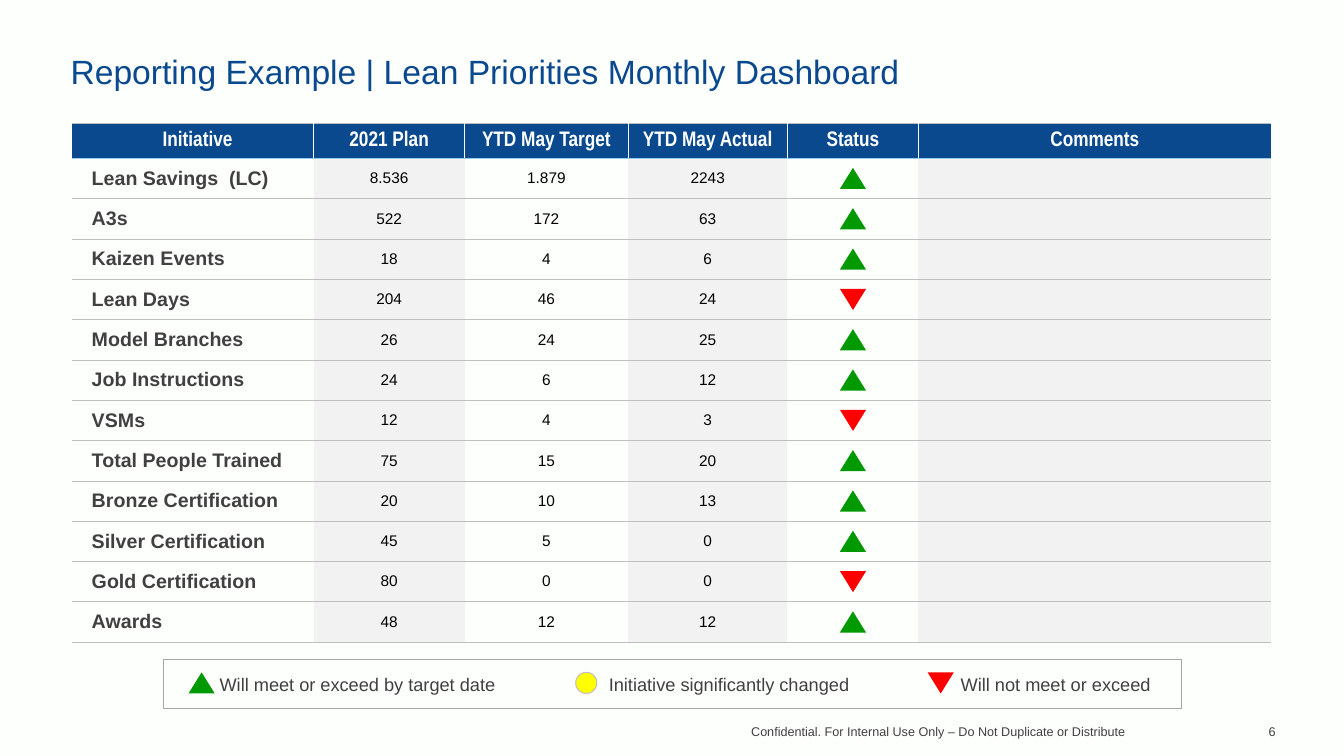
from dataclasses import dataclass
from typing import Any, Optional

from lxml import etree
from pptx import Presentation
from pptx import util as u
from pptx.dml.color import RGBColor
from pptx.enum import shapes, text
from pptx.oxml import ns

COLORS = {
    "background": "FDFFFD", "navy": "0A498E", "sky": "97CAEB", "white": "FFFFFF",
    "black": "000000", "dark": "404040", "rule": "BFBFBF", "frame": "A6A6A6",
    "band": "F2F2F2", "up": "009900", "changed": "FFFF00", "down": "FF0000",
}
PLAIN_TABLE = "{2D5ABB26-0587-4C30-8999-92F81FD0307C}"
LEFT, CENTER, RIGHT = text.PP_ALIGN.LEFT, text.PP_ALIGN.CENTER, text.PP_ALIGN.RIGHT
MIDDLE, BOTTOM = text.MSO_ANCHOR.MIDDLE, text.MSO_ANCHOR.BOTTOM

TABLE_LEFT, TABLE_TOP = 0.71, 1.22
HEADER_HEIGHT, ROW_HEIGHT = 0.35, 0.4
COLUMN_WIDTHS = [2.4, 1.5, 1.62, 1.58, 1.3, 3.5]
BANDED_COLUMNS = {1, 3, 5}
HEADERS = ["Initiative", "2021 Plan", "YTD May Target", "YTD May Actual", "Status", "Comments"]
MARK_WIDTH, MARK_HEIGHT = 0.26, 0.21


@dataclass(frozen=True)
class Style:
    size: float
    color: str
    name: str = "Arial"
    bold: bool = False
    align: Any = LEFT
    spacing: float = 1.0


@dataclass(frozen=True)
class Initiative:
    label: str
    plan: str
    target: str
    actual: str
    status: str = "up"


@dataclass(frozen=True)
class Legend:
    status: str
    label: str
    mark_left: float
    label_left: float
    label_width: float


TITLE = Style(24, "navy", spacing=0.9)
HEADER = Style(15, "white", "Arial Narrow", True, CENTER, 0.9)
LABEL = Style(14, "dark", bold=True)
VALUE = Style(11, "black", align=CENTER)
LEGEND = Style(13, "dark")
FOOTER = Style(9, "dark", align=RIGHT)

INITIATIVES = [
    Initiative("Lean Savings  (LC)", "8.536", "1.879", "2243"),
    Initiative("A3s", "522", "172", "63"),
    Initiative("Kaizen Events", "18", "4", "6"),
    Initiative("Lean Days", "204", "46", "24", "down"),
    Initiative("Model Branches", "26", "24", "25"),
    Initiative("Job Instructions", "24", "6", "12"),
    Initiative("VSMs", "12", "4", "3", "down"),
    Initiative("Total People Trained", "75", "15", "20"),
    Initiative("Bronze Certification", "20", "10", "13"),
    Initiative("Silver Certification", "45", "5", "0"),
    Initiative("Gold Certification", "80", "0", "0", "down"),
    Initiative("Awards", "48", "12", "12"),
]
LEGENDS = [
    Legend("up", "Will meet or exceed by target date", 1.87, 2.08, 2.97),
    Legend("changed", "Initiative significantly changed", 5.71, 5.94, 2.62),
    Legend("down", "Will not meet or exceed", 9.2, 9.43, 2.11),
]


def rgb(color: str) -> RGBColor:
    return RGBColor.from_string(COLORS[color])


def apply(target: Any, values: dict) -> None:
    for name, value in values.items():
        setattr(target, name, value)


def margins(left: float, top: float, right: float, bottom: float) -> dict:
    sides = ("left", "top", "right", "bottom")
    return {f"margin_{side}": u.Inches(size) for side, size in zip(sides, (left, top, right, bottom))}


def write(tf: Any, words: str, style: Style) -> None:
    p = tf.paragraphs[0]
    apply(p, {"alignment": style.align, "line_spacing": style.spacing})
    r = p.add_run()
    r.text = words
    apply(r.font, {"size": u.Pt(style.size), "name": style.name, "bold": style.bold})
    r.font.color.rgb = rgb(style.color)


def add_label(s: Any, words: str, style: Style, box: tuple, frame: dict) -> None:
    tf = s.shapes.add_textbox(*map(u.Inches, box)).text_frame
    apply(tf, {"word_wrap": True, **frame})
    write(tf, words, style)


def add_figure(s: Any, kind: Any, box: tuple, fill: Optional[str] = None,
               line: Optional[str] = None, weight: float = 0.5) -> Any:
    sp = s.shapes.add_shape(kind, *map(u.Inches, box))
    sp.shadow.inherit = False
    if fill:
        sp.fill.solid()
        sp.fill.fore_color.rgb = rgb(fill)
    else:
        sp.fill.background()
    if line:
        sp.line.color.rgb = rgb(line)
        sp.line.width = u.Pt(weight)
    else:
        sp.line.fill.background()
    return sp


def add_mark(s: Any, status: str, left: float, top: float) -> None:
    if status == "changed":
        add_figure(s, shapes.MSO_SHAPE.OVAL, (left, top, MARK_HEIGHT, MARK_HEIGHT), status, "rule", 0.75)
        return
    box = (left, top, MARK_WIDTH, MARK_HEIGHT)
    sp = add_figure(s, shapes.MSO_SHAPE.ISOSCELES_TRIANGLE, box, status)
    sp.rotation = 180 if status == "down" else 0


def add_border(cell: Any, side: str, color: str, weight: float) -> None:
    line = etree.SubElement(cell._tc.get_or_add_tcPr(), ns.qn(f"a:ln{side}"), w=str(u.Pt(weight)))
    fill = etree.SubElement(line, ns.qn("a:solidFill"))
    etree.SubElement(fill, ns.qn("a:srgbClr"), val=COLORS[color])


def format_cell(cell: Any, row: int, column: int) -> None:
    header = row == 0
    if header:
        if column > 0:
            add_border(cell, "L", "white", 1)
        if column < len(HEADERS) - 1:
            add_border(cell, "R", "white", 1)
        inset = margins(0 if column else 0.1, 0.03, 0, 0.02)
    else:
        inset = margins(0 if column else 0.2, 0, 0, 0)
    add_border(cell, "T", "sky" if row == 1 else "rule", 0.5)
    add_border(cell, "B", "sky" if header else "rule", 0.5)
    apply(cell, {"vertical_anchor": MIDDLE, **inset})
    if header or column in BANDED_COLUMNS:
        cell.fill.solid()
        cell.fill.fore_color.rgb = rgb("navy" if header else "band")
    else:
        cell.fill.background()


def add_dashboard(s: Any) -> None:
    rows = [HEADERS] + [[i.label, i.plan, i.target, i.actual, "", ""] for i in INITIATIVES]
    heights = [HEADER_HEIGHT] + [ROW_HEIGHT] * len(INITIATIVES)
    box = (TABLE_LEFT, TABLE_TOP, sum(COLUMN_WIDTHS), sum(heights))
    table = s.shapes.add_table(len(rows), len(HEADERS), *map(u.Inches, box)).table
    apply(table, {"first_row": False, "horz_banding": False})
    table._tbl.tblPr.find(ns.qn("a:tableStyleId")).text = PLAIN_TABLE
    for column, width in zip(table.columns, COLUMN_WIDTHS):
        column.width = u.Inches(width)
    for r, (words, height) in enumerate(zip(rows, heights)):
        table.rows[r].height = u.Inches(height)
        for c, word in enumerate(words):
            cell = table.cell(r, c)
            format_cell(cell, r, c)
            if word:
                write(cell.text_frame, word, HEADER if r == 0 else VALUE if c else LABEL)
    mark_left = TABLE_LEFT + sum(COLUMN_WIDTHS[:4]) + (COLUMN_WIDTHS[4] - MARK_WIDTH) / 2
    first_top = TABLE_TOP + HEADER_HEIGHT + (ROW_HEIGHT - MARK_HEIGHT) / 2
    for i, initiative in enumerate(INITIATIVES):
        add_mark(s, initiative.status, mark_left, first_top + i * ROW_HEIGHT)


def main() -> None:
    prs = Presentation()
    apply(prs, {"slide_width": u.Inches(13.33), "slide_height": u.Inches(7.5)})
    s = prs.slides.add_slide(prs.slide_layouts[5])
    s.background.fill.solid()
    s.background.fill.fore_color.rgb = rgb("background")

    title = s.shapes.title
    apply(title, dict(zip(("left", "top", "width", "height"), map(u.Inches, (0.6, 0.5, 12.15, 0.46)))))
    apply(title.text_frame, {"vertical_anchor": BOTTOM, "word_wrap": True,
                             "auto_size": text.MSO_AUTO_SIZE.NONE, **margins(0.1, 0.05, 0.1, 0.05)})
    write(title.text_frame, "Reporting Example | Lean Priorities Monthly Dashboard", TITLE)

    add_dashboard(s)

    add_figure(s, shapes.MSO_SHAPE.RECTANGLE, (1.62, 6.54, 10.1, 0.49), line="frame")
    for item in LEGENDS:
        add_label(s, item.label, LEGEND, (item.label_left, 6.63, item.label_width, 0.32), {"word_wrap": False})
        add_mark(s, item.status, item.mark_left, 6.67)

    add_label(s, "Confidential. For Internal Use Only – Do Not Duplicate or Distribute", FOOTER,
              (6.66, 7.13, 4.5, 0.25), {"vertical_anchor": BOTTOM, **margins(0, 0.05, 0, 0.05)})
    add_label(s, "6", FOOTER, (12.15, 7.13, 0.6, 0.25),
              {"vertical_anchor": BOTTOM, **margins(0, 0.05, 0.1, 0.05)})
    prs.save("out.pptx")


if __name__ == "__main__":
    main()
